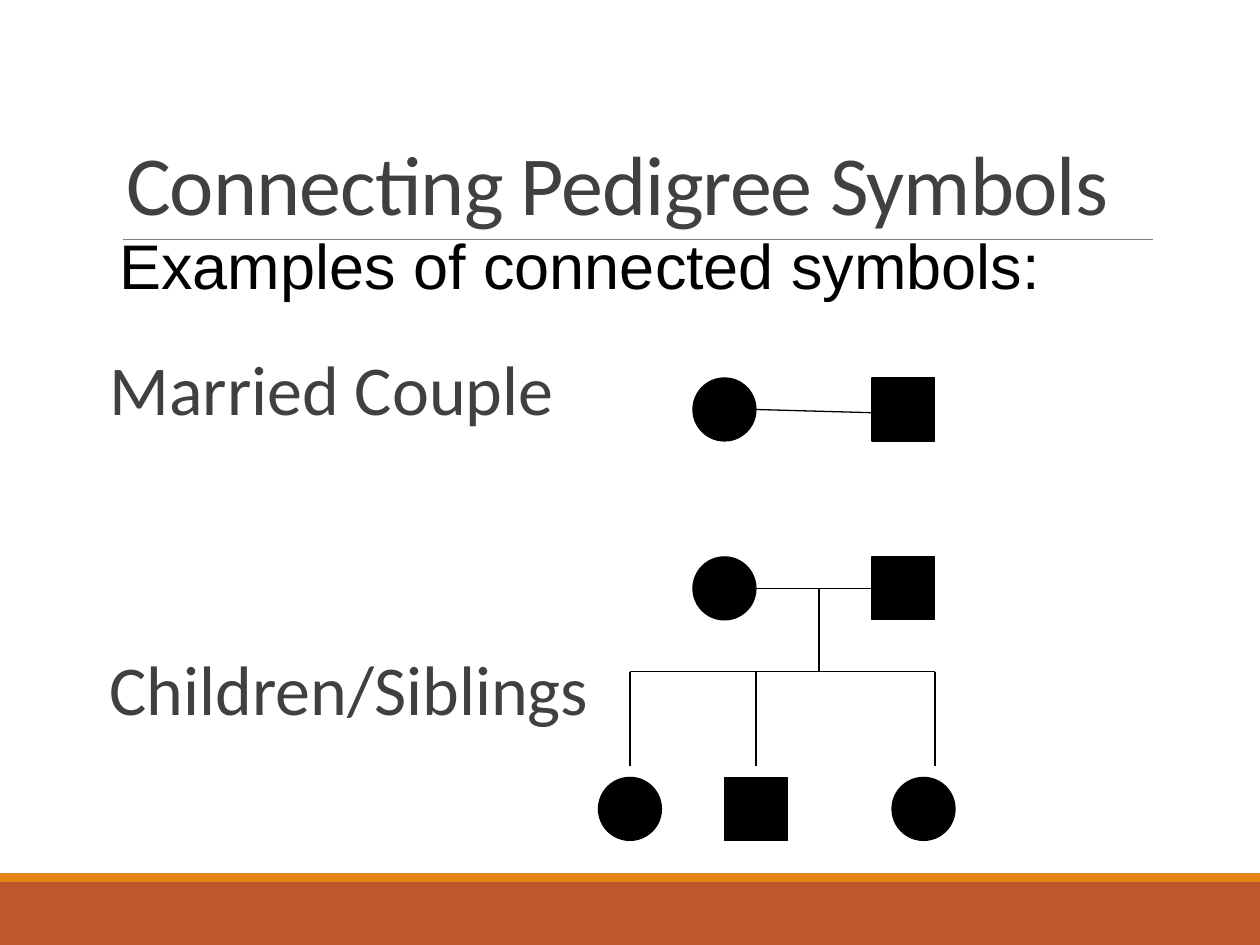
from lxml import etree
from pptx import Presentation
from pptx.dml.color import RGBColor
from pptx.enum import shapes, text
from pptx.oxml.ns import qn
from pptx.util import Inches, Pt

RECT = shapes.MSO_SHAPE.RECTANGLE
OVAL = shapes.MSO_SHAPE.OVAL
SYMBOL_SIZE = 0.5

presentation = Presentation()
presentation.slide_width = Inches(10)
presentation.slide_height = Inches(7.5)
slide = presentation.slides.add_slide(presentation.slide_layouts[5])


def add_block(kind, left, top, width, height, color):
    shape = slide.shapes.add_shape(
        kind, Inches(left), Inches(top), Inches(width), Inches(height))
    shape.shadow.inherit = False
    shape.fill.solid()
    shape.fill.fore_color.rgb = RGBColor.from_string(color)
    shape.line.fill.background()
    return shape


def add_line(x1, y1, x2, y2, color="000000", weight=0.75):
    line = slide.shapes.add_connector(
        shapes.MSO_CONNECTOR.STRAIGHT,
        Inches(x1), Inches(y1), Inches(x2), Inches(y2))
    line.line.color.rgb = RGBColor.from_string(color)
    line.line.width = Pt(weight)
    etree.SubElement(line._element.spPr, qn("a:effectLst"))


# Footer bands and title rule
add_block(RECT, 0, 7, 10, 0.5, "BD582C")
add_block(RECT, 0, 6.93, 10, 0.07, "E48312")
add_line(0.98, 1.9, 9.15, 1.9, "808080", 0.5)

# Title
title = slide.shapes.title
title.left, title.top = Inches(0.9), Inches(0.31)
title.width, title.height = Inches(8.25), Inches(1.59)
title.text_frame.text = "Connecting Pedigree Symbols"
title.text_frame.auto_size = text.MSO_AUTO_SIZE.NONE
title.text_frame.vertical_anchor = text.MSO_ANCHOR.BOTTOM
paragraph = title.text_frame.paragraphs[0]
paragraph.alignment = text.PP_ALIGN.LEFT
paragraph.line_spacing = 0.85
paragraph.font.name = "Calibri"
paragraph.font.size = Pt(48)
paragraph.font.color.rgb = RGBColor.from_string("404040")
paragraph.runs[0].font._element.set("spc", "-50")

# Subtitle and row labels: wording, left, top, width, inset, font, size, color, spacing
labels = [
    ("Examples of connected symbols:", 0.85, 1.75, 7.51, 0.1, "Arial", 36, "000000", 1),
    ("Married Couple", 0.87, 2.77, 4.37, 0, "Calibri", 40, "404040", 0.9),
    ("Children/Siblings", 0.87, 5.15, 4.37, 0, "Calibri", 40, "404040", 0.9),
]
for wording, left, top, width, inset, font, size, color, spacing in labels:
    label = slide.shapes.add_textbox(
        Inches(left), Inches(top), Inches(width), Inches(0.7))
    frame = label.text_frame
    frame.word_wrap = False
    frame.margin_left = frame.margin_right = Inches(inset)
    frame.text = wording
    paragraph = frame.paragraphs[0]
    paragraph.line_spacing = spacing
    paragraph.font.name = font
    paragraph.font.size = Pt(size)
    paragraph.font.color.rgb = RGBColor.from_string(color)

# People: circles are female, squares are male
couple_top, parents_top, children_top = 3, 4.42, 6.17
people = [
    (OVAL, 5.5, couple_top), (RECT, 6.92, couple_top),
    (OVAL, 5.5, parents_top), (RECT, 6.92, parents_top),
    (OVAL, 4.75, children_top), (RECT, 5.75, children_top), (OVAL, 7.08, children_top),
]
for kind, left, top in people:
    person = add_block(kind, left, top, SYMBOL_SIZE, SYMBOL_SIZE, "000000")
    person.line.color.rgb = RGBColor.from_string("000000")
    person.line.width = Pt(0.75)

# Marriage lines
parents_middle = parents_top + SYMBOL_SIZE / 2
add_line(6, 3.25, 7.08, 3.28)
add_line(6, parents_middle, 7.08, parents_middle)

# Descent line, sibling line and a drop to each child
sibling_y = 5.33
add_line(6.5, parents_middle, 6.5, sibling_y)
add_line(5, sibling_y, 7.42, sibling_y)
for x in (5, 6, 7.42):
    add_line(x, sibling_y, x, 6.08)

presentation.save("out.pptx")
